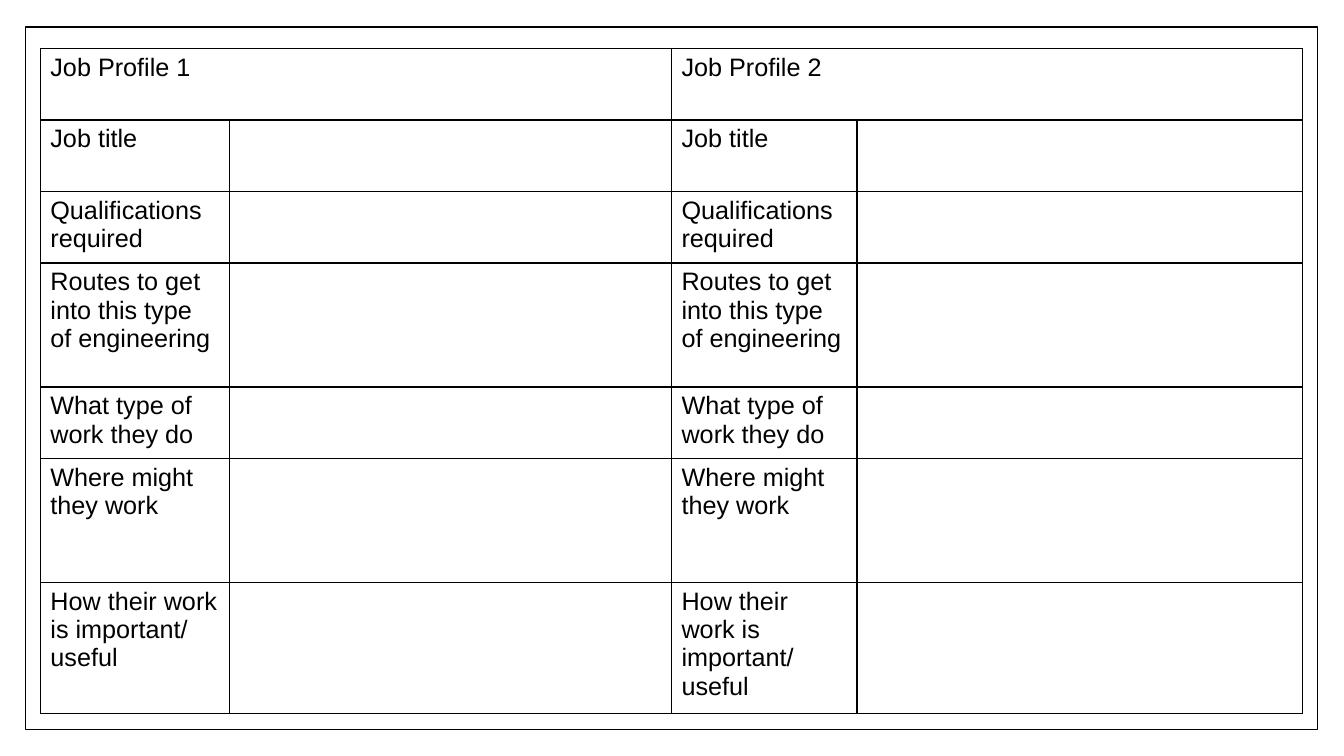
from lxml.etree import SubElement
from pptx import Presentation
from pptx.dml.color import RGBColor
from pptx.enum.shapes import MSO_SHAPE
from pptx.oxml.ns import qn
from pptx.util import Inches, Pt

PROFILES = ["Job Profile 1", "Job Profile 2"]
QUESTIONS = [
    "Job title",
    "Qualifications required",
    "Routes to get into this type of engineering",
    "What type of work they do",
    "Where might they work",
    "How their work is important/ useful",
]
COLUMNS = [1.88, 4.38, 1.84, 4.42]
ROWS = [0.71, 0.71, 0.71, 1.23, 0.71, 1.23, 1.3]
COLORS = {"ink": "000000", "paper": "FFFFFF"}


def color(name):
    return RGBColor.from_string(COLORS[name])


def draw_borders(cell):
    properties = cell._tc.get_or_add_tcPr()
    for position, side in enumerate(("lnL", "lnR", "lnT", "lnB")):
        border = SubElement(properties, qn(f"a:{side}"), w=str(Pt(1)))
        fill = SubElement(border, qn("a:solidFill"))
        SubElement(fill, qn("a:srgbClr"), val=COLORS["ink"])
        properties.insert(position, border)


def write(cell, text):
    cell.text = text
    font = cell.text_frame.paragraphs[0].font
    font.name, font.size = "Arial", Pt(18)
    font.color.rgb = color("ink")


deck = Presentation()
deck.slide_width, deck.slide_height = Inches(13.33), Inches(7.5)
slide = deck.slides.add_slide(deck.slide_layouts[6])

page_frame = slide.shapes.add_shape(
    MSO_SHAPE.RECTANGLE, Inches(0.25), Inches(0.27), Inches(12.82), Inches(6.97))
page_frame.shadow.inherit = False
page_frame.fill.solid()
page_frame.fill.fore_color.rgb = color("paper")
page_frame.line.color.rgb = color("ink")
page_frame.line.width = Pt(1)

worksheet = slide.shapes.add_table(
    len(ROWS), len(COLUMNS), Inches(0.4), Inches(0.48),
    Inches(sum(COLUMNS)), Inches(sum(ROWS))).table
worksheet.first_row = worksheet.horz_banding = False
for column, width in zip(worksheet.columns, COLUMNS):
    column.width = Inches(width)
for row, height in zip(worksheet.rows, ROWS):
    row.height = Inches(height)

for cell in worksheet.iter_cells():
    cell.fill.background()
    draw_borders(cell)

for number, profile in enumerate(PROFILES):
    left = number * 2
    heading = worksheet.cell(0, left)
    heading.merge(worksheet.cell(0, left + 1))
    write(heading, profile)
    for line, question in enumerate(QUESTIONS, start=1):
        write(worksheet.cell(line, left), question)

deck.save("out.pptx")
